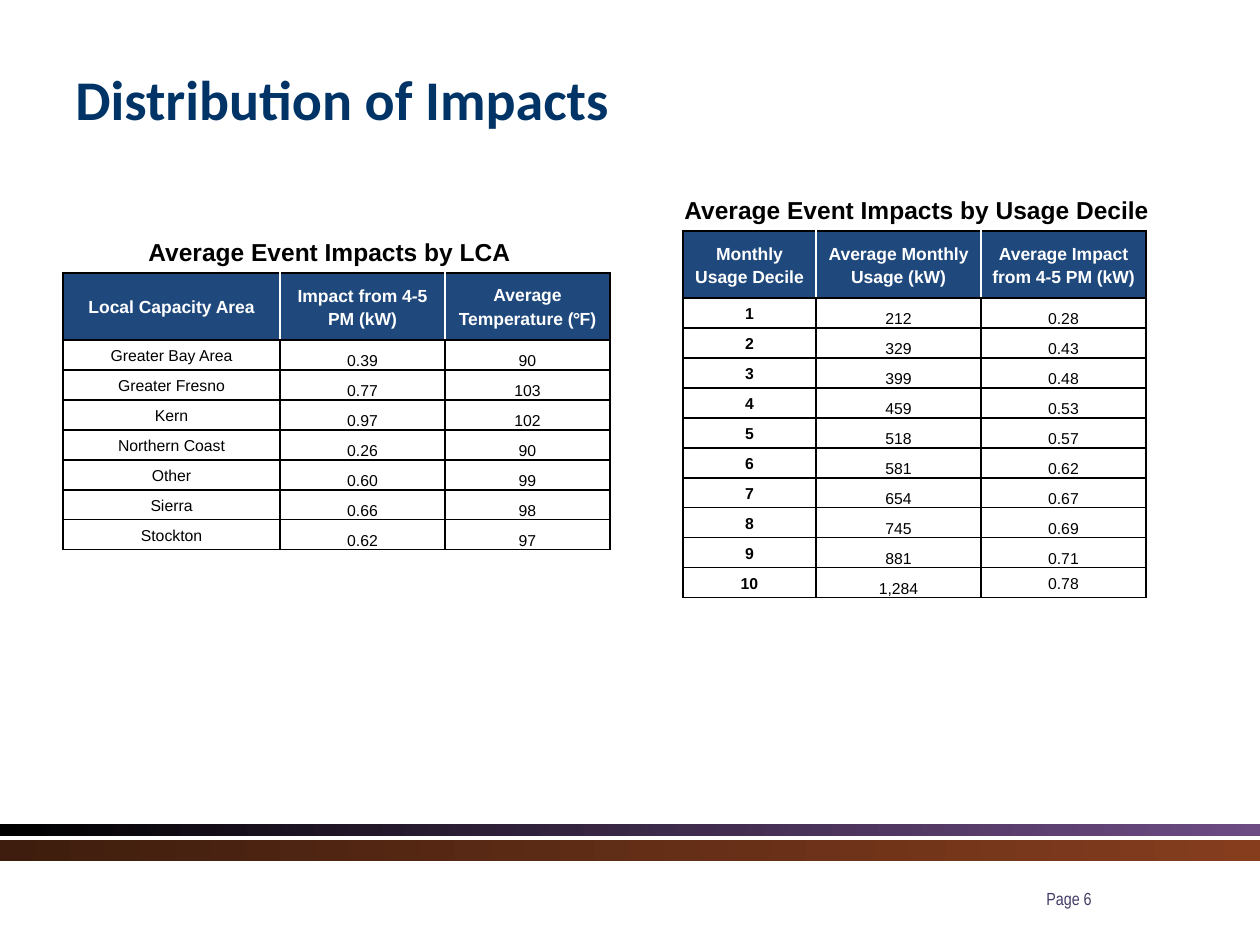
import pptx
import pptx.dml.color
import pptx.enum.shapes
import pptx.enum.text
import pptx.oxml
import pptx.oxml.ns
import pptx.util

PX_PER_INCH = 126
BLACK, WHITE, HEADER_BLUE = "000000", "FFFFFF", "1F497D"
ANCHOR = pptx.enum.text.MSO_ANCHOR
CENTER = pptx.enum.text.PP_ALIGN.CENTER

AREA_HEADERS = [
    [("Local Capacity Area", "Arial")],
    [("Impact from 4-5 PM (kW)", "Arial")],
    [("Average Temperature (", "Arial"), ("°", "Calibri"), ("F)", "Arial")],
]
AREA_ROWS = [
    ("Greater Bay Area", "0.39", "90"),
    ("Greater Fresno", "0.77", "103"),
    ("Kern", "0.97", "102"),
    ("Northern Coast", "0.26", "90"),
    ("Other", "0.60", "99"),
    ("Sierra", "0.66", "98"),
    ("Stockton", "0.62", "97"),
]
DECILE_HEADERS = [
    [("Monthly Usage Decile", "Arial")],
    [("Average Monthly Usage (kW)", "Arial")],
    [("Average Impact from 4-5 PM (kW)", "Arial")],
]
DECILE_ROWS = [
    ("1", "212", "0.28"),
    ("2", "329", "0.43"),
    ("3", "399", "0.48"),
    ("4", "459", "0.53"),
    ("5", "518", "0.57"),
    ("6", "581", "0.62"),
    ("7", "654", "0.67"),
    ("8", "745", "0.69"),
    ("9", "881", "0.71"),
    ("10", "1,284", "0.78"),
]


def px(length):
    return pptx.util.Emu(round(length * 914400 / PX_PER_INCH))


def color(value):
    return pptx.dml.color.RGBColor.from_string(value)


def add_run(paragraph, text, font, size, hex_color, bold=False):
    run = paragraph.add_run()
    run.text = text
    run.font.name = font
    run.font.size = pptx.util.Pt(size)
    run.font.bold = bold
    run.font.color.rgb = color(hex_color)


def add_text(slide, box, text, font, size, hex_color, bold=False,
             anchor=ANCHOR.TOP, align=None, wrap=True):
    text_frame = slide.shapes.add_textbox(*map(px, box)).text_frame
    text_frame.word_wrap = wrap
    if not wrap:
        text_frame.auto_size = pptx.enum.text.MSO_AUTO_SIZE.SHAPE_TO_FIT_TEXT
    text_frame.vertical_anchor = anchor
    paragraph = text_frame.paragraphs[0]
    paragraph.alignment = align
    add_run(paragraph, text, font, size, hex_color, bold)


def add_gradient_band(slide, box, start, end, end_opacity=100):
    shape = slide.shapes.add_shape(
        pptx.enum.shapes.MSO_SHAPE.RECTANGLE, *map(px, box))
    shape.shadow.inherit = False
    shape.line.fill.background()
    shape.fill.gradient()
    shape.fill.gradient_angle = 0
    for stop, position, value in zip(shape.fill.gradient_stops, (0, 1), (start, end)):
        stop.position = position
        stop.color.rgb = color(value)
    if end_opacity < 100:
        end_color = list(shape._element.spPr.iter(pptx.oxml.ns.qn("a:srgbClr")))[-1]
        alpha = pptx.oxml.parse_xml(
            f'<a:alpha {pptx.oxml.ns.nsdecls("a")} val="{end_opacity * 1000}"/>')
        end_color.append(alpha)


def set_borders(cell, left, right, top, bottom):
    """Draw 1 pt cell borders, ahead of the fill as the schema demands."""
    properties = cell._tc.get_or_add_tcPr()
    sides = zip("LRTB", (left, right, top, bottom))
    for index, (side, value) in enumerate(sides):
        properties.insert(index, pptx.oxml.parse_xml(
            f'<a:ln{side} {pptx.oxml.ns.nsdecls("a")} w="12700">'
            f'<a:solidFill><a:srgbClr val="{value}"/></a:solidFill></a:ln{side}>'))


def fill_cell(cell, runs, size, hex_color, bold, spacing, anchor):
    cell.margin_left = cell.margin_right = px(9)
    cell.margin_top = cell.margin_bottom = 0
    cell.vertical_anchor = anchor
    paragraph = cell.text_frame.paragraphs[0]
    paragraph.alignment = CENTER
    paragraph.line_spacing = 1.15
    paragraph.space_before = paragraph.space_after = pptx.util.Pt(spacing)
    for text, font in runs:
        add_run(paragraph, text, font, size, hex_color, bold)


def add_impact_table(slide, left, top, widths, headers, rows, bold_labels=False):
    header_height, row_height = 67, 30
    frame = slide.shapes.add_table(
        len(rows) + 1, len(widths), px(left), px(top),
        px(sum(widths)), px(header_height + row_height * len(rows)))
    table = frame.table
    table.horz_banding = False
    for column, width in zip(table.columns, widths):
        column.width = px(width)
    for index, row in enumerate(table.rows):
        row.height = px(row_height if index else header_height)

    last = len(widths) - 1
    for column, runs in enumerate(headers):
        cell = table.cell(0, column)
        fill_cell(cell, runs, 10, WHITE, True, 5, ANCHOR.MIDDLE)
        cell.fill.solid()
        cell.fill.fore_color.rgb = color(HEADER_BLUE)
        set_borders(cell, WHITE if column else BLACK,
                    WHITE if column < last else BLACK, BLACK, BLACK)
    for row, values in enumerate(rows, 1):
        for column, value in enumerate(values):
            cell = table.cell(row, column)
            fill_cell(cell, [(value, "Arial")], 9, BLACK,
                      bold_labels and column == 0, 3,
                      ANCHOR.BOTTOM if column else ANCHOR.MIDDLE)
            cell.fill.background()
            set_borders(cell, BLACK, BLACK, BLACK, BLACK)
    return table


def add_caption(slide, box, text):
    add_text(slide, box, text, "Arial", 14, BLACK, bold=True, wrap=False)


def add_footer(slide, top):
    add_gradient_band(slide, (0, top, 1260, 11), "000000", "542D6F", 85)
    add_gradient_band(slide, (0, top + 15, 1260, 21), "3E1D0E", "853D1E")
    add_text(slide, (935, top + 57, 268, 28), "Page 6", "Arial Narrow", 10,
             "433B67", align=CENTER)


def main():
    presentation = pptx.Presentation()
    presentation.slide_width, presentation.slide_height = px(1260), px(945)
    slide = presentation.slides.add_slide(presentation.slide_layouts[6])

    add_footer(slide, 825)
    add_text(slide, (63, 38, 1134, 120), "Distribution of Impacts", "Calibri", 32,
             "003366", bold=True, anchor=ANCHOR.MIDDLE)
    add_impact_table(slide, 63, 273, (217, 165, 165), AREA_HEADERS, AREA_ROWS)
    decile_table = add_impact_table(slide, 683, 231, (133, 165, 165),
                                    DECILE_HEADERS, DECILE_ROWS, bold_labels=True)
    decile_table.cell(len(DECILE_ROWS), 2).vertical_anchor = ANCHOR.MIDDLE
    add_caption(slide, (136, 231, 389, 42), "Average Event Impacts by LCA")
    add_caption(slide, (672, 189, 491, 42), "Average Event Impacts by Usage Decile")

    presentation.save("out.pptx")


if __name__ == "__main__":
    main()
